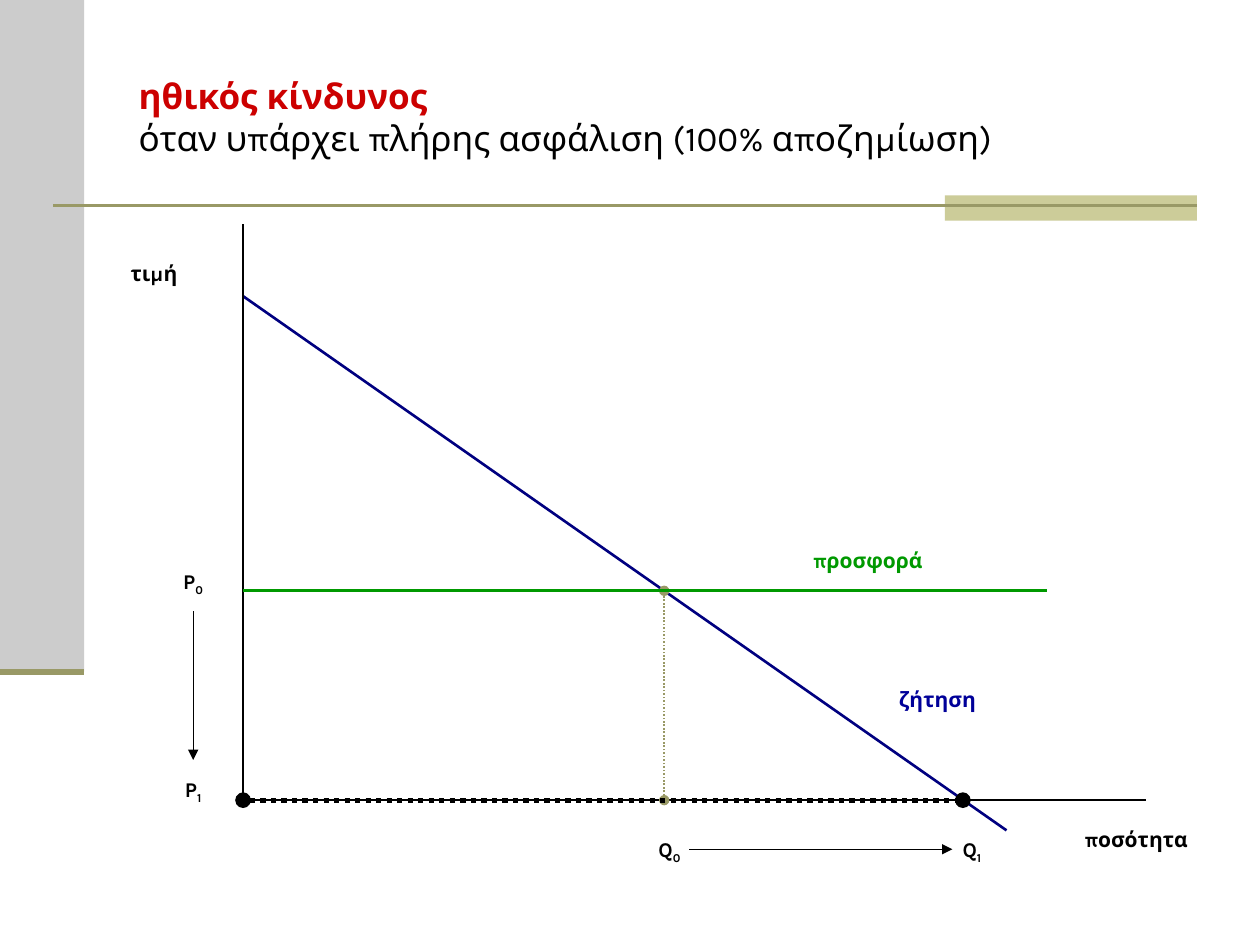
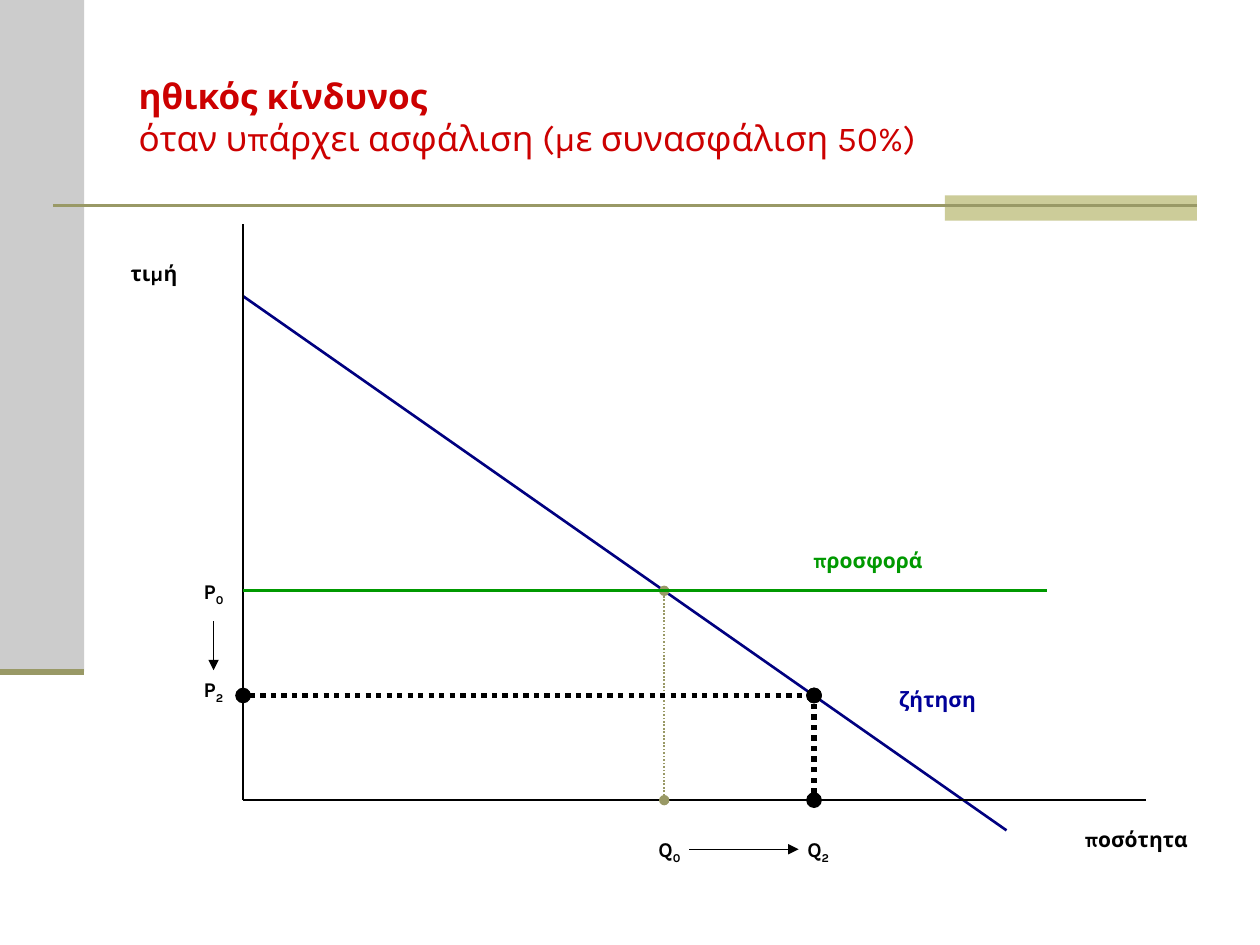
from dataclasses import dataclass
from lxml.etree import SubElement
from pptx import Presentation
from pptx.dml.color import RGBColor as Rgb
from pptx.enum.dml import MSO_LINE_DASH_STYLE as Dash
from pptx.enum.shapes import MSO_CONNECTOR as Link, MSO_SHAPE as Preset
from pptx.enum.text import MSO_ANCHOR as Anchor, MSO_AUTO_SIZE as Fit, PP_ALIGN as Align
from pptx.oxml.ns import qn
from pptx.util import Cm, Pt


@dataclass(frozen=True)
class Theme:
    font: str = "Karla"
    title_size: int = 20
    label_size: int = 12
    ink: str = "000000"
    accent: str = "CC0000"
    side: str = "CCCCCC"
    tab: str = "CCCC99"
    olive: str = "999966"
    demand_line: str = "000080"
    demand_text: str = "000099"
    supply: str = "009900"


THEME = Theme()

ORIGIN_X, ORIGIN_Y = 4.9, 16.13
P0, P2 = 11.91, 14.02
Q0, Q1, Q2 = 13.39, 19.41, 16.41
LABEL_HEIGHT = 0.76
SYMBOL_WIDTH = 1.19
QUANTITY_TOP = 16.74
QUANTITY_ARROW_Y = 17.12


def add_span(para, text, size=THEME.label_size, color=THEME.ink, bold=True, baseline=None):
    span = para.add_run()
    span.text = text
    span.font.name = THEME.font
    span.font.size = Pt(size)
    span.font.bold = bold
    span.font.color.rgb = Rgb.from_string(color)
    if baseline is not None:
        span._r.get_or_add_rPr().set("baseline", str(baseline * 1000))


def add_title(page, heading, subtitle, subtitle_color):
    title = page.shapes.title
    title.left, title.top, title.width, title.height = Cm(2.54), Cm(0.76), Cm(21.59), Cm(3.18)
    frame = title.text_frame
    frame.auto_size = Fit.NONE
    frame.word_wrap = True
    frame.vertical_anchor = Anchor.MIDDLE
    para = frame.paragraphs[0]
    para.alignment = Align.LEFT
    add_span(para, heading, size=THEME.title_size, color=THEME.accent)
    para.add_line_break()
    add_span(para, subtitle, size=THEME.title_size, color=subtitle_color, bold=False)


def add_band(page, left, top, width, height, color):
    band = page.shapes.add_shape(Preset.RECTANGLE, Cm(left), Cm(top), Cm(width), Cm(height))
    band.shadow.inherit = False
    band.fill.solid()
    band.fill.fore_color.rgb = Rgb.from_string(color)
    band.line.fill.background()


def add_line(page, start, end, color=THEME.ink, width=1, dash=None, head=None, tail=None):
    line = page.shapes.add_connector(Link.STRAIGHT, *map(Cm, start), *map(Cm, end))
    line.line.color.rgb = Rgb.from_string(color)
    line.line.width = Pt(width)
    if dash is not None:
        line.line.dash_style = dash
    properties = line.element.spPr
    outline = properties.find(qn("a:ln"))
    for tag, kind in (("a:headEnd", head), ("a:tailEnd", tail)):
        if kind:
            SubElement(outline, qn(tag), type=kind)
    SubElement(properties, qn("a:effectLst"))
    return line


def add_guide(page, start, end, color=THEME.ink, width=3):
    add_line(page, start, end, color, width, dash=Dash.ROUND_DOT, head="oval", tail="oval")


def add_shift_arrow(page, start, end):
    return add_line(page, start, end, width=0.75, tail="triangle")


def add_label(page, text, left, top, width=3.2, color=THEME.ink, index=None):
    box = page.shapes.add_textbox(Cm(left), Cm(top), Cm(width), Cm(LABEL_HEIGHT))
    frame = box.text_frame
    frame.word_wrap = True
    frame.auto_size = Fit.SHAPE_TO_FIT_TEXT
    para = frame.paragraphs[0]
    para.alignment = Align.CENTER
    add_span(para, text, color=color)
    if index is not None:
        add_span(para, index, color=color, baseline=-25)
    return box


def add_frame(page):
    add_band(page, 0, 0, 1.7, 13.54, THEME.side)
    add_band(page, 19.05, 3.94, 5.08, 0.51, THEME.tab)
    add_line(page, (1.07, 4.14), (24.13, 4.14), THEME.olive, 1.5)
    add_line(page, (0, 13.54), (1.7, 13.54), THEME.olive, 3.5)


def add_market(page, guides):
    origin = ORIGIN_X, ORIGIN_Y
    add_line(page, (ORIGIN_X, 5.97), (20.29, 16.74), THEME.demand_line, 1.5)
    add_line(page, origin, (ORIGIN_X, 4.52))
    add_line(page, origin, (23.11, ORIGIN_Y))
    add_guide(page, (Q0, ORIGIN_Y), (Q0, P0), THEME.olive, 1)
    for start, end in guides:
        add_guide(page, start, end)
    add_line(page, (ORIGIN_X, P0), (21.11, P0), THEME.supply, 1.5)
    add_label(page, "τιμή", 1.9, 5.13, width=2.41)
    add_label(page, "ζήτηση", 17.3, 13.72, color=THEME.demand_text)
    add_label(page, "προσφορά", 15.9, 10.92, color=THEME.supply)
    add_label(page, "ποσότητα", 21.31, 16.54)


def add_price_shift(page, index, left, tops, arrow_span, joined=False):
    old_top, new_top = tops
    add_label(page, "P", left, old_top, SYMBOL_WIDTH, index="0")
    new_price = add_label(page, "P", left, new_top, SYMBOL_WIDTH, index=index)
    middle = left + SYMBOL_WIDTH / 2
    arrow = add_shift_arrow(page, *((middle, y) for y in arrow_span))
    if joined:
        arrow.end_connect(new_price, 0)


def add_quantity_shift(page, index, left, arrow_end, width=SYMBOL_WIDTH):
    add_label(page, "Q", 12.9, QUANTITY_TOP, SYMBOL_WIDTH, index="0")
    add_label(page, "Q", left, QUANTITY_TOP, width, index=index)
    add_shift_arrow(page, (13.89, QUANTITY_ARROW_Y), (arrow_end, QUANTITY_ARROW_Y))


def add_page(deck, subtitle, subtitle_color, guides):
    page = deck.slides.add_slide(deck.slide_layouts[5])
    add_frame(page)
    add_market(page, guides)
    add_title(page, "ηθικός κίνδυνος", subtitle, subtitle_color)
    return page


def main():
    deck = Presentation()
    deck.slide_width, deck.slide_height = Cm(25.4), Cm(19.05)

    full = add_page(
        deck, "όταν υπάρχει πλήρης ασφάλιση (100% αποζημίωση)", THEME.ink,
        [((ORIGIN_X, ORIGIN_Y), (Q1, ORIGIN_Y))],
    )
    add_price_shift(full, "1", 3.3, (11.33, 15.52), (12.32, 15.32))
    add_quantity_shift(full, "1", 19.1, 19.2, width=0.99)

    shared = add_page(
        deck, "όταν υπάρχει ασφάλιση (με συνασφάλιση 50%)", THEME.accent,
        [((ORIGIN_X, P2), (Q2, P2)), ((Q2, ORIGIN_Y), (Q2, P2))],
    )
    add_price_shift(shared, "2", 3.71, (11.53, 13.51), (12.52, 13.51), joined=True)
    add_quantity_shift(shared, "2", 15.9, 16.1)

    deck.save("out.pptx")


if __name__ == "__main__":
    main()
